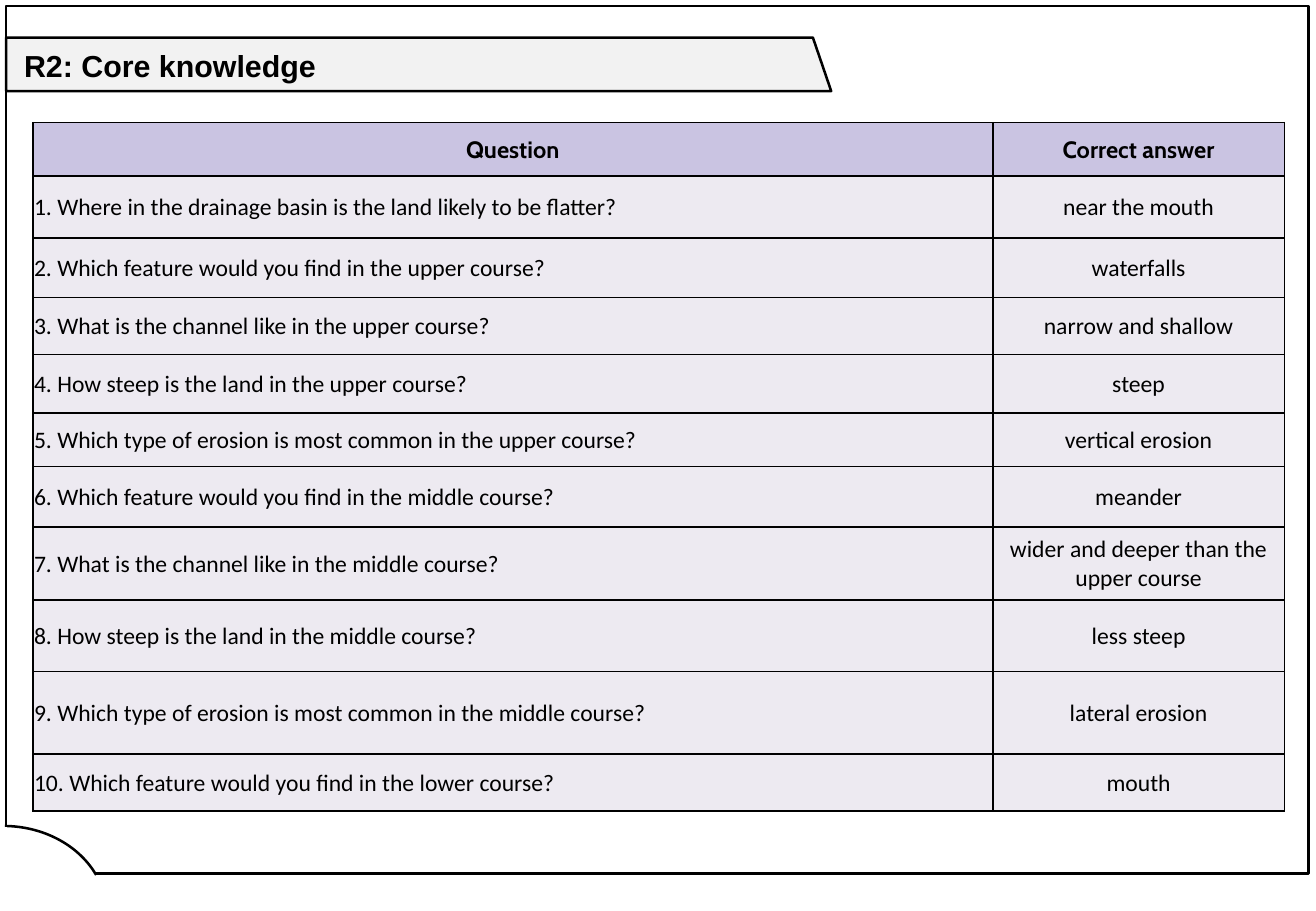
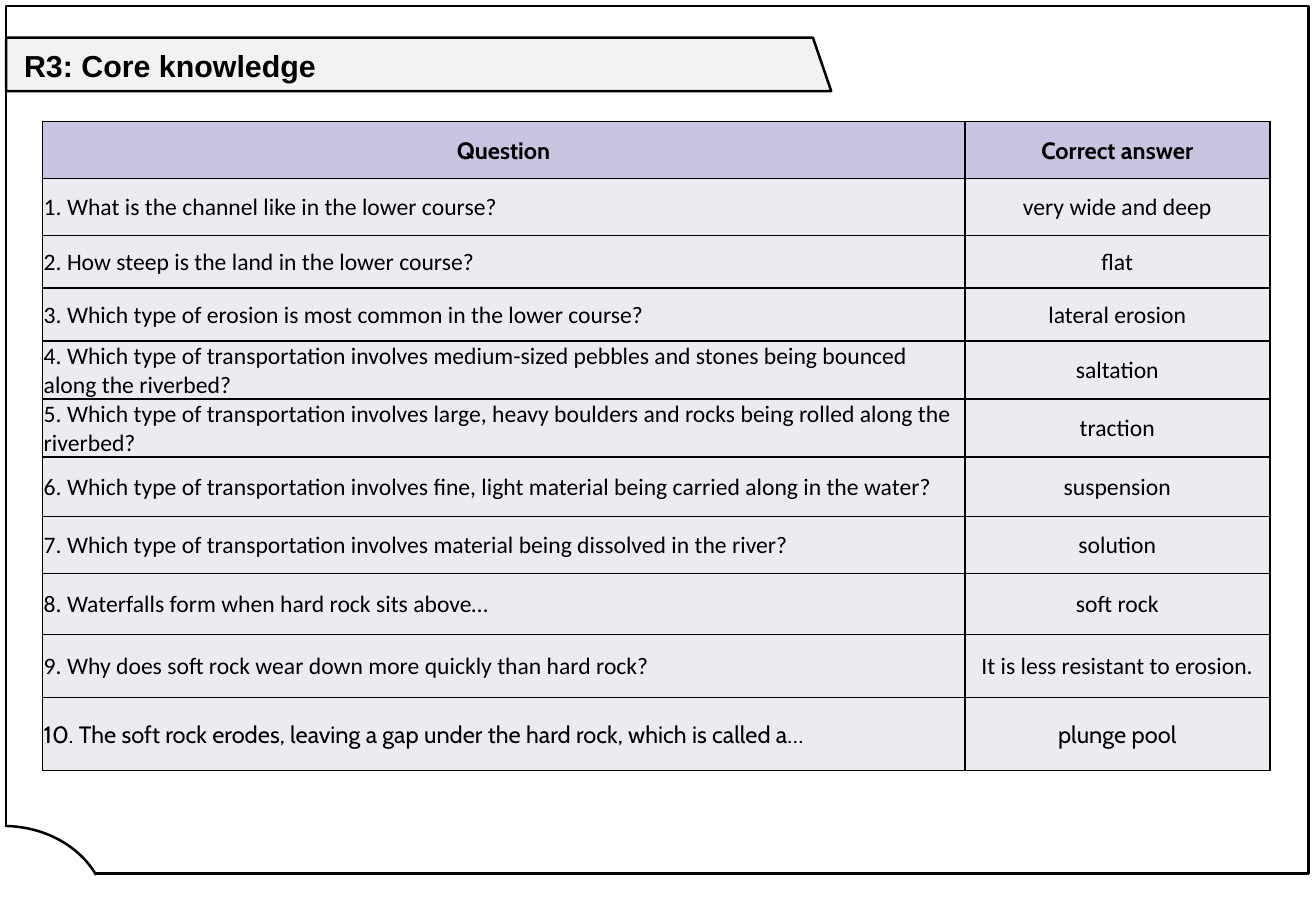
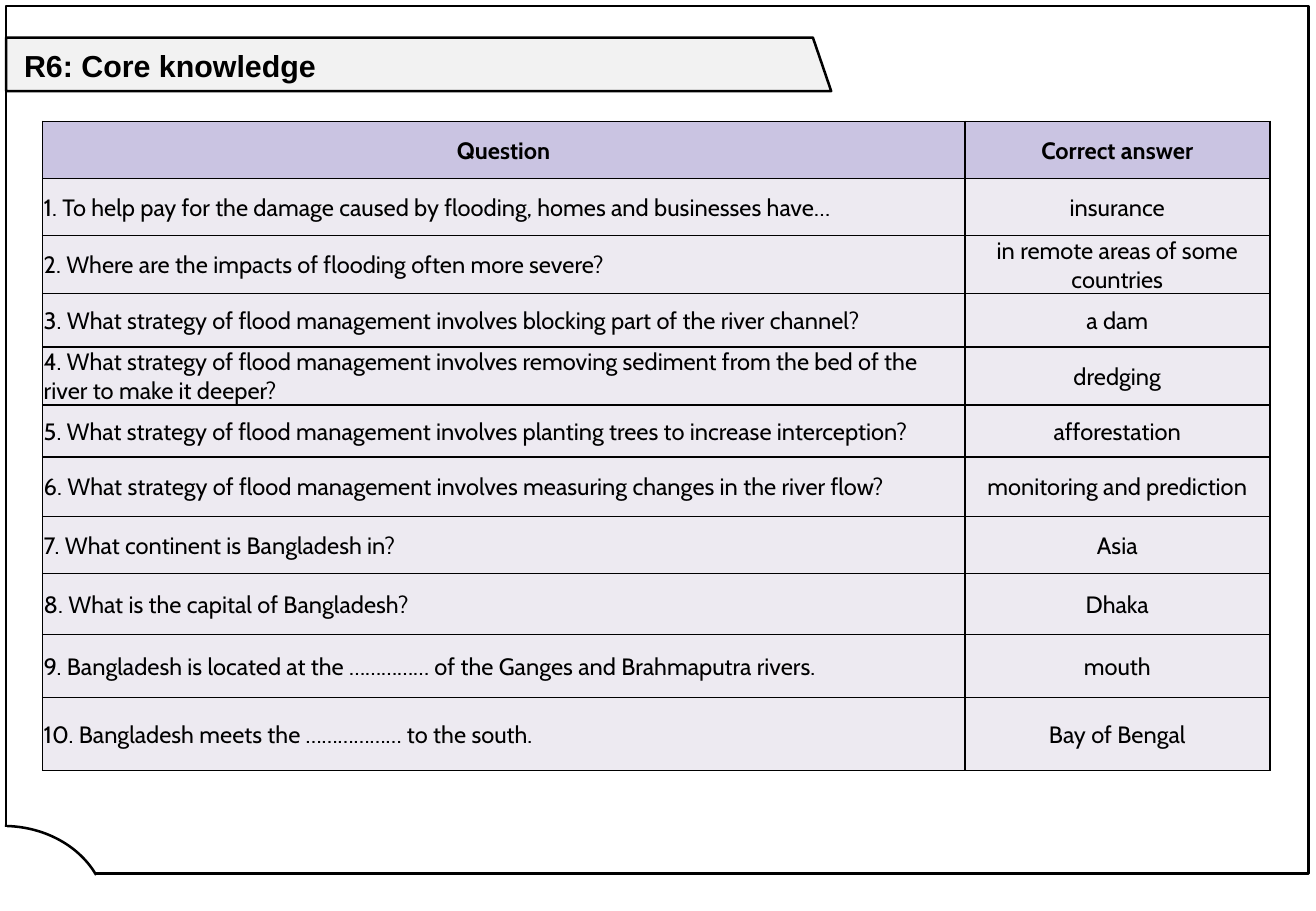
"""Build three river quiz answer slides on one shared frame."""
from lxml.etree import SubElement
from pptx import Presentation
from pptx.dml.color import RGBColor
from pptx.enum.shapes import MSO_SHAPE
from pptx.enum.text import MSO_ANCHOR, PP_ALIGN
from pptx.oxml.ns import qn
from pptx.util import Inches, Pt

COLOURS = {"ink": "000000", "paper": "FFFFFF", "band": "F2F2F2",
           "header": "CAC4E2", "body": "EDEAF1"}
HEADINGS = ("Question", "Correct answer")
BAND_CORNERS = [(0.05, 0.31), (6.69, 0.31), (6.84, 0.75), (0.05, 0.75)]
TITLE_FORMAT = {"name": "Arial", "size": Pt(18), "bold": True}
HEADER_FORMAT = {"name": "Cabin", "size": Pt(14), "bold": True}
CELL_MARGINS = {"margin_left": 0.01, "margin_right": 0.01,
                "margin_top": 0.01, "margin_bottom": 0}

WIDE_GRID = {
    "left": 0.27, "top": 1.01, "columns": [7.9, 2.4],
    "rows": [0.44, 0.51, 0.49, 0.47, 0.48, 0.44, 0.5, 0.6, 0.59, 0.68, 0.47],
}
NARROW_GRID = {
    "left": 0.35, "top": 1, "columns": [7.59, 2.51],
    "rows": [0.47, 0.47, 0.43, 0.44, 0.45, 0.43, 0.49, 0.47, 0.5, 0.52, 0.6],
}

QUIZZES = [
    {
        "title": "R2: Core knowledge",
        "grid": WIDE_GRID,
        "fonts": ["Calibri"] * 10,
        "answers": [
            ("Where in the drainage basin is the land likely to be flatter?", "near the mouth"),
            ("Which feature would you find in the upper course?", "waterfalls"),
            ("What is the channel like in the upper course?", "narrow and shallow"),
            ("How steep is the land in the upper course?", "steep"),
            ("Which type of erosion is most common in the upper course?", "vertical erosion"),
            ("Which feature would you find in the middle course?", "meander"),
            ("What is the channel like in the middle course?",
             "wider and deeper than the upper course"),
            ("How steep is the land in the middle course?", "less steep"),
            ("Which type of erosion is most common in the middle course?", "lateral erosion"),
            ("Which feature would you find in the lower course?", "mouth"),
        ],
    },
    {
        "title": "R3: Core knowledge",
        "grid": NARROW_GRID,
        "fonts": ["Calibri"] * 9 + ["Cabin"],
        "answers": [
            ("What is the channel like in the lower course?", "very wide and deep"),
            ("How steep is the land in the lower course?", "flat"),
            ("Which type of erosion is most common in the lower course?", "lateral erosion"),
            ("Which type of transportation involves medium-sized pebbles and stones "
             "being bounced along the riverbed?", "saltation"),
            ("Which type of transportation involves large, heavy boulders and rocks "
             "being rolled along the riverbed?", "traction"),
            ("Which type of transportation involves fine, light material "
             "being carried along in the water?", "suspension"),
            ("Which type of transportation involves material being dissolved in the river?",
             "solution"),
            ("Waterfalls form when hard rock sits above…", "soft rock"),
            ("Why does soft rock wear down more quickly than hard rock?",
             "It is less resistant to erosion."),
            ("The soft rock erodes, leaving a gap under the hard rock, which is called a…",
             "plunge pool"),
        ],
    },
    {
        "title": "R6: Core knowledge",
        "grid": NARROW_GRID,
        "fonts": ["Cabin"] * 10,
        "answers": [
            ("To help pay for the damage caused by flooding, homes and businesses have…",
             "insurance"),
            ("Where are the impacts of flooding often more severe?",
             "in remote areas of some countries"),
            ("What strategy of flood management involves blocking part of the river channel?",
             "a dam"),
            ("What strategy of flood management involves removing sediment "
             "from the bed of the river to make it deeper?", "dredging"),
            ("What strategy of flood management involves planting trees "
             "to increase interception?", "afforestation"),
            ("What strategy of flood management involves measuring changes in the river flow?",
             "monitoring and prediction"),
            ("What continent is Bangladesh in?", "Asia"),
            ("What is the capital of Bangladesh?", "Dhaka"),
            ("Bangladesh is located at the …………… of the Ganges and Brahmaputra rivers.",
             "mouth"),
            ("Bangladesh meets the ……………… to the south.", "Bay of Bengal"),
        ],
    },
]


def colour(name):
    return RGBColor.from_string(COLOURS[name])


def style_shape(shape, fill=None, outlined=True):
    shape.shadow.inherit = False
    if fill:
        shape.fill.solid()
        shape.fill.fore_color.rgb = colour(fill)
    else:
        shape.fill.background()
    if outlined:
        shape.line.color.rgb = colour("ink")
        shape.line.width = Pt(1.5)
    else:
        shape.line.fill.background()


def write(paragraph, text, formats):
    span = paragraph.add_run()
    span.text = text
    for key, value in formats.items():
        setattr(span.font, key, value)
    span.font.color.rgb = colour("ink")
    return span


def move_frame_to_layout(page, layout):
    """Draw the band, border and corner, then place them on the layout."""
    corners = [(Inches(x), Inches(y)) for x, y in BAND_CORNERS]
    builder = page.shapes.build_freeform(*corners[0])
    builder.add_line_segments(corners[1:], close=True)
    band = builder.convert_to_shape()
    style_shape(band, "band")

    def add(kind, *place):
        return page.shapes.add_shape(kind, *map(Inches, place))

    border = add(MSO_SHAPE.RECTANGLE, 0.05, 0.05, 10.72, 7.14)
    style_shape(border)
    corner = add(MSO_SHAPE.ARC, -0.82, 6.8, 1.7, 1.45)
    corner.adjustments[0], corner.adjustments[1] = 162.525, 202.265
    style_shape(corner, "paper")
    patch = add(MSO_SHAPE.RECTANGLE, 0.01, 6.81, 0.05, 0.1)
    style_shape(patch, "paper", outlined=False)
    for shape in (band, border, corner, patch):
        layout.shapes.element.append(shape.element)


def add_title(page, text):
    box = page.shapes.add_textbox(*map(Inches, (0.1, 0.21, 6.43, 0.63)))
    frame = box.text_frame
    frame.word_wrap = True
    frame.vertical_anchor = MSO_ANCHOR.MIDDLE
    para = frame.paragraphs[0]
    para.line_spacing = 1.07
    para.space_after = Pt(8)
    span = write(para, text, TITLE_FORMAT)
    span.font.element.set("spc", "100") if hasattr(span.font, "element") else \
        span.text and para.runs[0].font


def fill_cell(cell, text, fill, alignment, formats):
    properties = cell._tc.get_or_add_tcPr()
    for side in ("lnL", "lnR", "lnT", "lnB"):
        border = SubElement(properties, qn(f"a:{side}"), w=str(Pt(1)))
        paint = SubElement(border, qn("a:solidFill"))
        SubElement(paint, qn("a:srgbClr"), val=COLOURS["ink"])
    cell.fill.solid()
    cell.fill.fore_color.rgb = colour(fill)
    cell.vertical_anchor = MSO_ANCHOR.MIDDLE
    for key, value in CELL_MARGINS.items():
        setattr(cell, key, Inches(value))
    para = cell.text_frame.paragraphs[0]
    para.alignment = alignment
    write(para, text, formats)


def add_answers(page, quiz):
    grid = quiz["grid"]
    place = (grid["left"], grid["top"], sum(grid["columns"]), sum(grid["rows"]))
    table = page.shapes.add_table(len(grid["rows"]), len(grid["columns"]),
                                  *map(Inches, place)).table
    table.horz_banding = False
    for column, width in zip(table.columns, grid["columns"]):
        column.width = Inches(width)
    for row, height in zip(table.rows, grid["rows"]):
        row.height = Inches(height)
    for cell, heading in zip(table.rows[0].cells, HEADINGS):
        fill_cell(cell, heading, "header", PP_ALIGN.CENTER, HEADER_FORMAT)
    for number, (question, answer) in enumerate(quiz["answers"], 1):
        formats = {**HEADER_FORMAT, "name": quiz["fonts"][number - 1], "bold": False}
        fill_cell(table.cell(number, 0), f"{number}. {question}", "body",
                  PP_ALIGN.LEFT, formats)
        fill_cell(table.cell(number, 1), answer, "body", PP_ALIGN.CENTER, formats)


def main():
    deck = Presentation()
    deck.slide_width, deck.slide_height = Inches(10.83), Inches(7.5)
    layout = deck.slide_layouts[6]
    for index, quiz in enumerate(QUIZZES):
        page = deck.slides.add_slide(layout)
        if index == 0:
            move_frame_to_layout(page, layout)
        add_title(page, quiz["title"])
        add_answers(page, quiz)
    deck.save("out.pptx")


if __name__ == "__main__":
    main()
